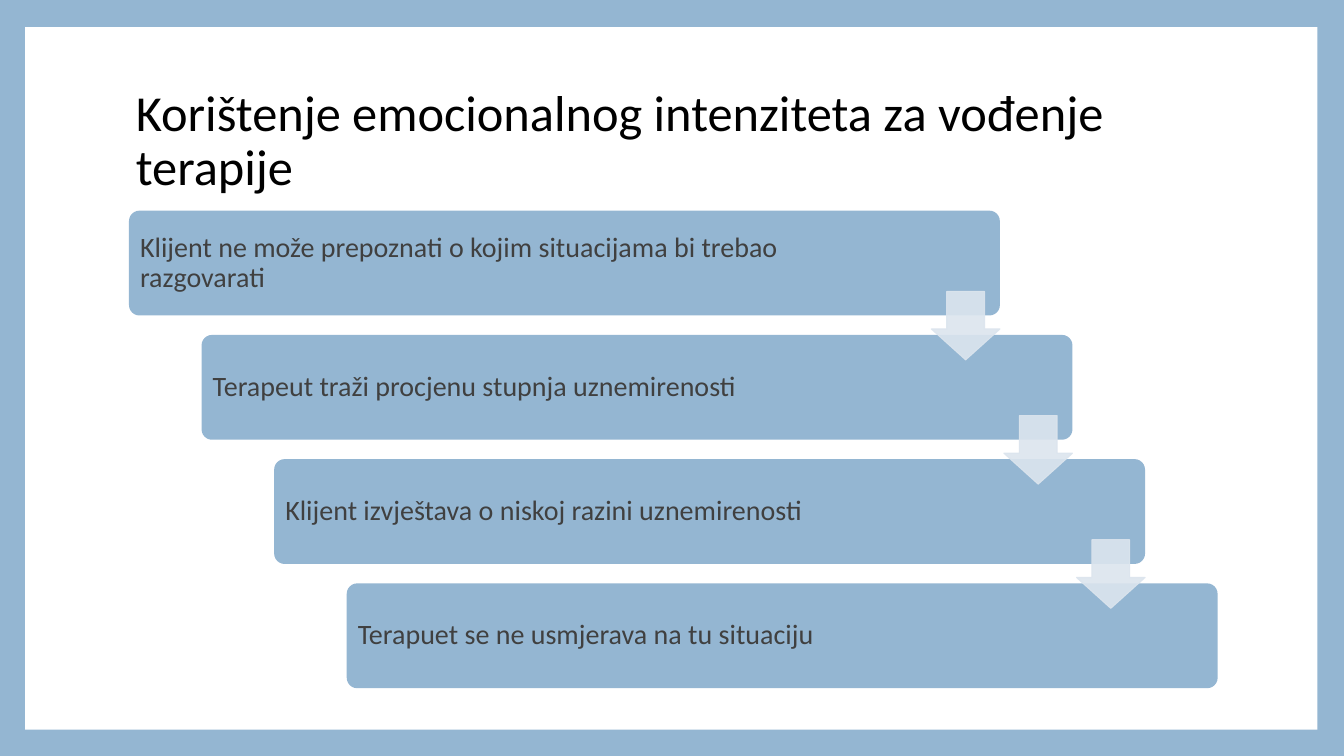
from dataclasses import dataclass

from lxml import etree
from pptx import Presentation
from pptx.dml.color import RGBColor
from pptx.enum.shapes import MSO_SHAPE
from pptx.enum.text import MSO_ANCHOR, PP_ALIGN
from pptx.oxml.ns import qn
from pptx.shapes.autoshape import Shape
from pptx.slide import Slide
from pptx.text.text import TextFrame
from pptx.util import Pt

RECTANGLE = MSO_SHAPE.RECTANGLE
ROUNDED = MSO_SHAPE.ROUNDED_RECTANGLE
DOWN_ARROW = MSO_SHAPE.DOWN_ARROW
MIDDLE = MSO_ANCHOR.MIDDLE
LEFT = PP_ALIGN.LEFT


@dataclass(frozen=True)
class Theme:
    font: str = "Calibri"
    title_size: float = 36
    step_size: float = 20
    blue: RGBColor = RGBColor(0x94, 0xB6, 0xD2)
    arrow: RGBColor = RGBColor(0xDC, 0xE5, 0xEE)
    panel: RGBColor = RGBColor(0xFF, 0xFF, 0xFF)
    title: RGBColor = RGBColor(0x00, 0x00, 0x00)
    step: RGBColor = RGBColor(0x40, 0x40, 0x40)
    arrow_alpha: int = 90


@dataclass(frozen=True)
class Box:
    left: float
    top: float
    width: float
    height: float

    def shifted(self, across: float, down: float) -> "Box":
        return Box(self.left + across, self.top + down, self.width, self.height)


@dataclass(frozen=True)
class Step:
    text: str
    box: Box


THEME = Theme()
PANEL = Box(18, 19.44, 923.04, 501.84)
TITLE = Box(90, 48.24, 777.6, 106.56)
FIRST_STEP = Box(92.16, 150.48, 622.08, 74.88)
FIRST_ARROW = Box(665.28, 208.08, 48.96, 48.96)
STEP_ACROSS = 51.84
STEP_DOWN = 88.75
STEP_TEXTS = (
    "Klijent ne može prepoznati o kojim situacijama bi trebao razgovarati",
    "Terapeut traži procjenu stupnja uznemirenosti",
    "Klijent izvještava o niskoj razini uznemirenosti",
    "Terapuet se ne usmjerava na tu situaciju",
)


def add_block(slide: Slide, kind: MSO_SHAPE, box: Box, color: RGBColor) -> Shape:
    block = slide.shapes.add_shape(
        kind, Pt(box.left), Pt(box.top), Pt(box.width), Pt(box.height)
    )
    block.shadow.inherit = False
    block.fill.solid()
    block.fill.fore_color.rgb = color
    block.line.fill.background()
    return block


def write(frame: TextFrame, text: str, size: float, color: RGBColor) -> None:
    frame.word_wrap = True
    frame.vertical_anchor = MIDDLE
    paragraph = frame.paragraphs[0]
    paragraph.text = text
    paragraph.alignment = LEFT
    paragraph.line_spacing = 0.9
    paragraph.font.name = THEME.font
    paragraph.font.size = Pt(size)
    paragraph.font.color.rgb = color


def add_title(slide: Slide, text: str) -> None:
    title = slide.shapes.add_textbox(
        Pt(TITLE.left), Pt(TITLE.top), Pt(TITLE.width), Pt(TITLE.height)
    )
    write(title.text_frame, text, THEME.title_size, THEME.title)


def add_step(slide: Slide, step: Step) -> None:
    block = add_block(slide, ROUNDED, step.box, THEME.blue)
    block.adjustments[0] = 0.1
    frame = block.text_frame
    frame.margin_left = Pt(5.76)
    frame.margin_right = Pt(89.2)
    write(frame, step.text, THEME.step_size, THEME.step)


def add_arrow(slide: Slide, box: Box) -> None:
    arrow = add_block(slide, DOWN_ARROW, box, THEME.arrow)
    arrow.adjustments[0] = 0.55
    arrow.adjustments[1] = 0.45
    arrow.line.color.rgb = THEME.arrow
    arrow.line.width = Pt(0.79)
    for color in arrow.element.spPr.iter(qn("a:srgbClr")):
        alpha = etree.SubElement(color, qn("a:alpha"))
        alpha.set("val", str(THEME.arrow_alpha * 1000))


def main() -> None:
    deck = Presentation()
    deck.slide_width = Pt(960)
    deck.slide_height = Pt(540)
    slide = deck.slides.add_slide(deck.slide_layouts[6])
    slide.background.fill.solid()
    slide.background.fill.fore_color.rgb = THEME.blue

    add_block(slide, RECTANGLE, PANEL, THEME.panel)
    add_title(slide, "Korištenje emocionalnog intenziteta za vođenje terapije")

    for index, text in enumerate(STEP_TEXTS):
        box = FIRST_STEP.shifted(index * STEP_ACROSS, index * STEP_DOWN)
        add_step(slide, Step(text, box))
    for index in range(len(STEP_TEXTS) - 1):
        add_arrow(slide, FIRST_ARROW.shifted(index * STEP_ACROSS, index * STEP_DOWN))

    deck.save("out.pptx")


if __name__ == "__main__":
    main()
